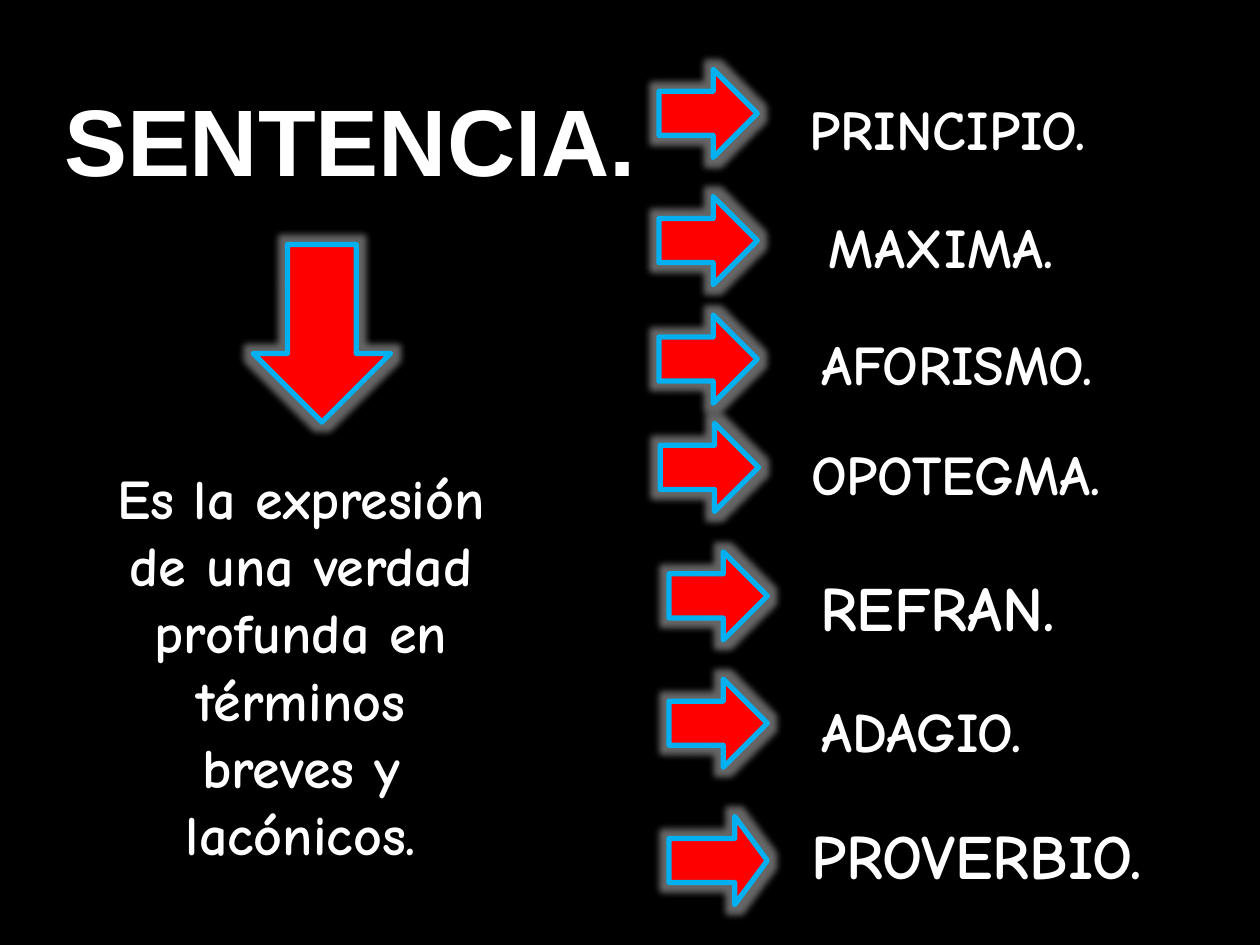
import pptx
import pptx.util
import pptx.dml.color
import pptx.enum.shapes
import pptx.enum.text
import pptx.oxml
import pptx.oxml.ns
from lxml import etree

W, H = 10, 7.5
SHAPE = pptx.enum.shapes.MSO_SHAPE
ALIGN = pptx.enum.text.PP_ALIGN

# Content: text, (left, top, width, height), size, font
TITLE = ("SENTENCIA.", (-0.35, 0.6, 6.26, 1.01), 54, "Arial")
MEANING = (
    "Es la expresión de una verdad profunda en términos breves y lacónicos.",
    (0.83, 3.63, 3.12, 3.87), 32, "Comic Neue")

# Synonyms: text, size, text left, text top, text width, arrow left, arrow top
SYNONYMS = [
    ("PRINCIPIO.", 32, 6.33, 0.70, 3.08, 5.23, 0.55),
    ("MAXIMA.", 32, 6.48, 1.64, 2.85, 5.23, 1.56),
    ("AFORISMO.", 32, 6.42, 2.57, 3.28, 5.23, 2.50),
    ("OPOTEGMA.", 32, 6.34, 3.44, 3.32, 5.24, 3.36),
    ("REFRAN.", 36, 6.41, 4.46, 3.59, 5.31, 4.38),
    ("ADAGIO.", 32, 6.42, 5.48, 3.00, 5.31, 5.39),
    ("PROVERBIO.", 36, 6.34, 6.43, 4.03, 5.31, 6.48),
]
TEXT_HEIGHT = {32: 0.64, 36: 0.71}
ARROW_W, ARROW_H = 0.78, 0.7


def rgb(value):
    return pptx.dml.color.RGBColor.from_string(value)


def inches(box):
    return [pptx.util.Inches(v) for v in box]


def add_text(s, text, box, size, font="Comic Neue", align=ALIGN.LEFT):
    tf = s.shapes.add_textbox(*inches(box)).text_frame
    tf.word_wrap = True
    tf.auto_size = pptx.enum.text.MSO_AUTO_SIZE.SHAPE_TO_FIT_TEXT
    p = tf.paragraphs[0]
    p.text = text
    p.alignment = align
    p.font.size = pptx.util.Pt(size)
    p.font.name = font
    p.font.bold = True
    p.font.color.rgb = rgb("FFFFFF")


def add_glow(sp, radius, color, alpha):
    qn = pptx.oxml.ns.qn
    sp.shadow.inherit = False
    effects = sp._element.spPr.find(qn("a:effectLst"))
    glow = etree.SubElement(effects, qn("a:glow"), rad=str(pptx.util.Pt(radius)))
    clr = etree.SubElement(glow, qn("a:srgbClr"), val=color)
    etree.SubElement(clr, qn("a:alpha"), val=str(alpha * 1000))


def add_arrow(s, kind, box):
    sp = s.shapes.add_shape(kind, *inches(box))
    sp.fill.solid()
    sp.fill.fore_color.rgb = rgb("FF0000")
    sp.line.color.rgb = rgb("00B0F0")
    sp.line.width = pptx.util.Pt(3)
    add_glow(sp, 8, "FFFFFF", 40)
    return sp


def main():
    prs = pptx.Presentation()
    prs.slide_width, prs.slide_height = inches((W, H))
    s = prs.slides.add_slide(prs.slide_layouts[6])
    s.background.fill.solid()
    s.background.fill.fore_color.rgb = rgb("000000")

    # Term and its meaning
    for block in (TITLE, MEANING):
        add_text(s, *block, align=ALIGN.CENTER)
    add_arrow(s, SHAPE.DOWN_ARROW, (2.01, 1.94, 1.09, 1.41))

    # Synonyms, each with its arrow
    for text, size, left, top, width, arrow_left, arrow_top in SYNONYMS:
        arrow = add_arrow(s, SHAPE.RIGHT_ARROW,
                          (arrow_left, arrow_top, ARROW_W, ARROW_H))
        add_text(s, text, (left, top, width, TEXT_HEIGHT[size]), size)
    arrow.adjustments[1] = 0.37  # the last arrow has a shorter head

    prs.save("out.pptx")


if __name__ == "__main__":
    main()
